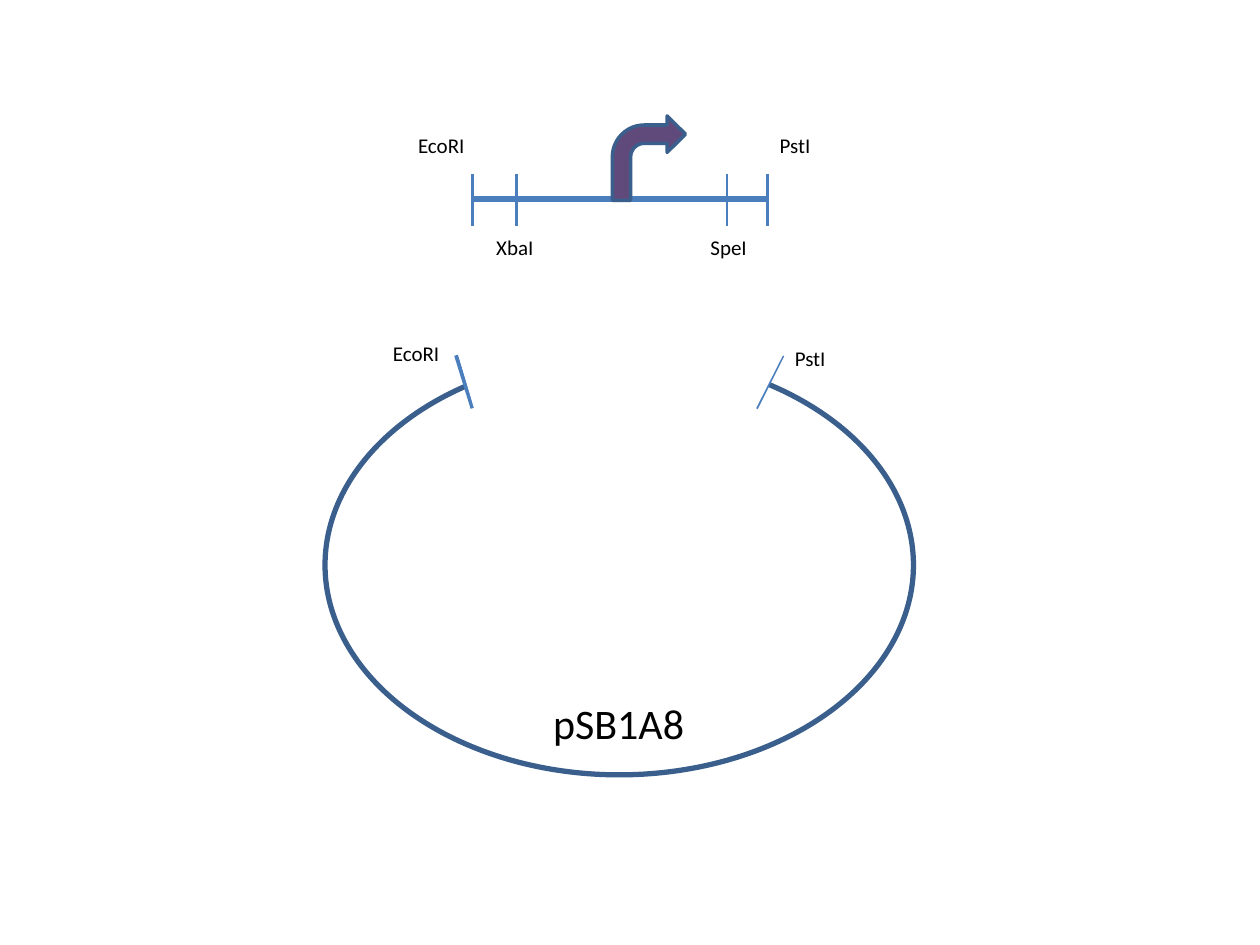
from dataclasses import dataclass

from lxml import etree
from pptx import Presentation
from pptx import util as u
from pptx.dml.color import RGBColor
from pptx.enum import shapes, text
from pptx.oxml import ns


@dataclass(frozen=True)
class Theme:
    """Colours, font and type sizes of the slide."""
    paper: RGBColor = RGBColor.from_string("FFFFFF")
    ink: RGBColor = RGBColor.from_string("000000")
    strand: RGBColor = RGBColor.from_string("4B7EBC")
    outline: RGBColor = RGBColor.from_string("3A5F8C")
    promoter: RGBColor = RGBColor.from_string("604A7B")
    font: str = "Calibri"
    site_size: int = 12
    name_size: int = 24


THEME = Theme()
SHAPE = shapes.MSO_SHAPE


def add_strand(group, start, end, width):
    """Draw a straight DNA line or a cut mark."""
    strand = group.shapes.add_connector(
        shapes.MSO_CONNECTOR.STRAIGHT, *map(u.Inches, start + end))
    strand.line.color.rgb = THEME.strand
    strand.line.width = u.Pt(width)
    etree.SubElement(strand.line._get_or_add_ln().getparent(), ns.qn("a:effectLst"))


def add_part(group, kind, box, fill, outline, width=2, rotation=0):
    """Draw a filled and outlined preset shape."""
    part = group.shapes.add_shape(kind, *map(u.Inches, box))
    part.shadow.inherit = False
    part.fill.solid()
    part.fill.fore_color.rgb = fill
    part.line.color.rgb = outline
    part.line.width = u.Pt(width)
    part.rotation = rotation


def add_label(group, wording, box, size=THEME.site_size, align=text.PP_ALIGN.LEFT):
    """Write one line of text."""
    label = group.shapes.add_textbox(*map(u.Inches, box))
    frame = label.text_frame
    frame.word_wrap = True
    frame.auto_size = text.MSO_AUTO_SIZE.SHAPE_TO_FIT_TEXT
    frame.text = wording
    paragraph = frame.paragraphs[0]
    paragraph.alignment = align
    font = paragraph.runs[0].font
    font.name = THEME.font
    font.size = u.Pt(size)
    font.color.rgb = THEME.ink


def add_sites(group, sites):
    """Label restriction sites given as name, left and top."""
    for name, left, top in sites:
        add_label(group, name, (left, top, 0.67, 0.3))


def add_plasmid(slide):
    """Draw the opened plasmid backbone with its two cut ends."""
    plasmid = slide.shapes.add_group_shape()
    add_part(plasmid, SHAPE.OVAL, (2.58, 2.82, 4.67, 3.33),
             THEME.paper, THEME.outline, 3)
    add_label(plasmid, "pSB1A8", (3.62, 5.49, 2.58, 0.5),
              THEME.name_size, text.PP_ALIGN.CENTER)
    for outer, inner in ((3.62, 3.75), (6.21, 6)):
        add_strand(plasmid, (outer, 2.82), (inner, 3.24), 2.25)
    add_sites(plasmid, (("EcoRI", 3.02, 2.65), ("PstI", 6.21, 2.69)))
    openings = (
        (SHAPE.ROUND_1_RECTANGLE, (3.69, 2.43, 0.42, 0.97), 343.6),
        (SHAPE.ROUND_1_RECTANGLE, (5.79, 2.3, 0.42, 0.89), 26.9),
        (SHAPE.ROUND_2_SAME_RECTANGLE, (3.92, 2.43, 2, 0.8), 0),
    )
    for kind, box, rotation in openings:
        add_part(plasmid, kind, box, THEME.paper, THEME.paper, rotation=rotation)


def add_insert(slide):
    """Draw the promoter insert with its four restriction sites."""
    insert = slide.shapes.add_group_shape()
    add_strand(insert, (3.74, 1.58), (6.09, 1.58), 3)
    for cut in (3.75, 4.1, 5.77, 6.09):
        add_strand(insert, (cut, 1.38), (cut, 1.79), 1.5)
    add_sites(insert, (("EcoRI", 3.22, 1), ("PstI", 6.09, 1),
                       ("XbaI", 3.84, 1.81), ("SpeI", 5.54, 1.81)))
    add_part(insert, SHAPE.BENT_ARROW, (4.86, 0.92, 0.58, 0.67),
             THEME.promoter, THEME.outline)


def main():
    """Build and save the cloning slide."""
    deck = Presentation()
    deck.slide_width, deck.slide_height = u.Inches(10), u.Inches(7.5)
    slide = deck.slides.add_slide(deck.slide_layouts[6])
    add_plasmid(slide)
    add_insert(slide)
    deck.save("out.pptx")


if __name__ == "__main__":
    main()
